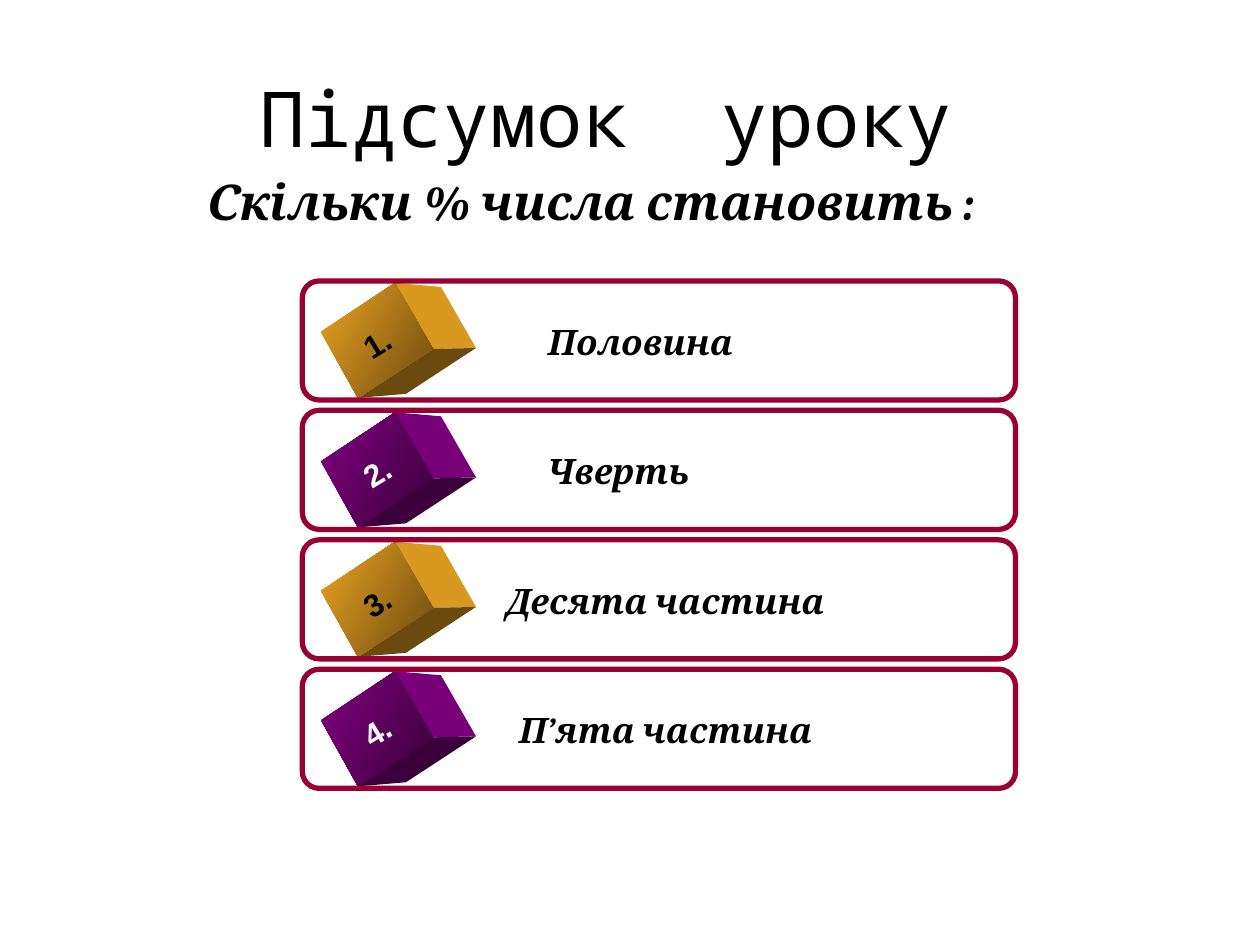
from pptx import Presentation, util as u
from pptx.dml.color import RGBColor
from pptx.enum import shapes, text

prs = Presentation()
prs.slide_width, prs.slide_height = u.Inches(10), u.Inches(7.5)
c, r = prs.slide_width / 100, prs.slide_height / 100
s = prs.slides.add_slide(prs.slide_layouts[6])


def rgb(value):
    return RGBColor.from_string(value)


def write(words, x, y, w, h, color, align, anchor, wrap, **font):
    sp = s.shapes.add_textbox(int(x * c), int(y * r), int(w * c), int(h * r))
    tf = sp.text_frame
    tf.word_wrap, tf.vertical_anchor = wrap, anchor
    p = tf.paragraphs[0]
    p.alignment = align
    run = p.add_run()
    run.text = words
    run.font.color.rgb = rgb(color)
    for name, value in font.items():
        setattr(run.font, name, value)
    return sp


LEFT, CENTER = text.PP_ALIGN.LEFT, text.PP_ALIGN.CENTER
TOP, MIDDLE = text.MSO_ANCHOR.TOP, text.MSO_ANCHOR.MIDDLE
title = {"name": "Noto Sans Mono", "size": u.Pt(44)}
serif = {"name": "Cambria", "bold": True, "italic": True}
number = {"name": "Arial", "bold": True, "size": u.Pt(18)}

write("Підсумок  уроку", 3.1, 4, 90, 16.67, "000000", CENTER, MIDDLE, True, **title)
write("Скільки % числа становить :", 9.1, 17.47, 75.6, 7.6, "000000",
      CENTER, TOP, True, size=u.Pt(28), **serif)

faces = {
    "side": [(31.35, 0.21), (35, 0.63), (37.78, 7.1), (34.37, 7.2)],
    "base": [(28.41, 12.38), (34.37, 7.2), (37.78, 7.1), (32.22, 11.96)],
    "front": [(25.48, 5.4), (31.35, 0.21), (34.37, 7.2), (28.41, 12.38)],
}
gold = {"front": "ECA422", "side": "D99820", "base": "6B4A10", "number": "000000"}
purple = {"front": "800080", "side": "780078", "base": "3B003B", "number": "FFFFFF"}
rows = [
    ("Половина", 42.5, gold),
    ("Чверть", 42.5, purple),
    ("Десята частина", 39.2, gold),
    ("П’ята частина", 40.2, purple),
]

for i, (label, x, colors) in enumerate(rows):
    y = 29.73 + 13.7 * i
    for face, points in faces.items():
        corners = [(int(px * c), int((y + py) * r)) for px, py in points]
        outline = s.shapes.build_freeform(*corners[0])
        outline.add_line_segments(corners[1:], close=True)
        sp = outline.convert_to_shape()
        sp.shadow.inherit = False
        sp.line.fill.background()
        if face == "front":
            sp.fill.gradient()
            sp.fill.gradient_angle = 330
            for stop, color in zip(sp.fill.gradient_stops, (colors["front"], colors["base"])):
                stop.color.rgb = rgb(color)
        else:
            sp.fill.solid()
            sp.fill.fore_color.rgb = rgb(colors[face])

    sp = write(f"{i + 1}.", 26.1, y + 2.4, 7.6, 8.27, colors["number"],
               CENTER, MIDDLE, False, **number)
    sp.rotation = 328.5

    sp = s.shapes.add_shape(shapes.MSO_SHAPE.ROUNDED_RECTANGLE,
                            int(24 * c), int(y * r), int(56.6 * c), int(12.6 * r))
    sp.adjustments[0] = 0.14
    sp.shadow.inherit = False
    sp.fill.background()
    sp.line.color.rgb = rgb("990033")
    sp.line.width = u.Pt(3)

    write(label, x, y + 3.5, 29.1, 5.87, "000000", LEFT, TOP, True, size=u.Pt(20), **serif)

prs.save("out.pptx")
